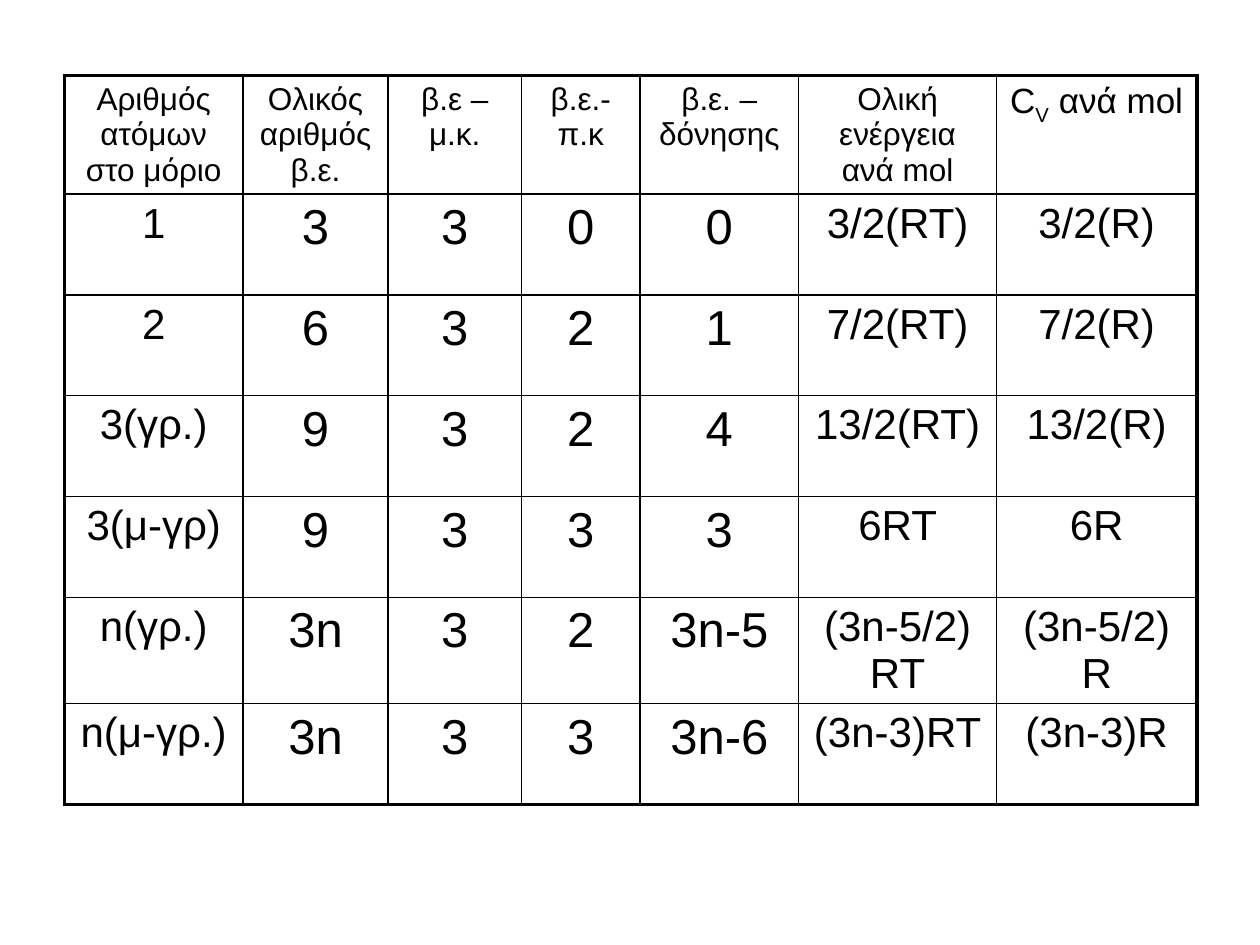
from lxml import etree
from pptx import Presentation, util as u
from pptx.dml.color import RGBColor
from pptx.enum import text
from pptx.oxml import ns

BLACK = RGBColor(0x00, 0x00, 0x00)
FONT = "Arial"
OUTER, INNER = 2.25, 1

COLUMN_WIDTHS = [1.42, 1.15, 1.06, 0.94, 1.26, 1.57, 1.59]
ROW_HEIGHT = 0.8
HEADINGS = [
    "Αριθμός ατόμων στο μόριο", "Ολικός αριθμός β.ε.", "β.ε – μ.κ.",
    "β.ε.- π.κ", "β.ε. – δόνησης", "Ολική ενέργεια ανά mol",
]
MOLECULES = [
    ["1", "3", "3", "0", "0", "3/2(RT)", "3/2(R)"],
    ["2", "6", "3", "2", "1", "7/2(RT)", "7/2(R)"],
    ["3(γρ.)", "9", "3", "2", "4", "13/2(RT)", "13/2(R)"],
    ["3(μ-γρ)", "9", "3", "3", "3", "6RT", "6R"],
    ["n(γρ.)", "3n", "3", "2", "3n-5", "(3n-5/2)RT", "(3n-5/2)R"],
    ["n(μ-γρ.)", "3n", "3", "3", "3n-6", "(3n-3)RT", "(3n-3)R"],
]
VALUE_SIZES = [24, 28, 28, 28, 28, 24, 24]


def add_run(cell, content, size, baseline=0):
    """Append a run to the cell; baseline is a percentage shift."""
    paragraph = cell.text_frame.paragraphs[0]
    paragraph.alignment = text.PP_ALIGN.CENTER
    run = paragraph.add_run()
    run.text = content
    run.font.name = FONT
    run.font.size = u.Pt(size)
    run.font.color.rgb = BLACK
    if baseline:
        run.font._element.set("baseline", str(baseline * 1000))


def set_borders(cell, widths):
    """Draw the left, right, top and bottom borders, widths in points."""
    properties = cell._tc.get_or_add_tcPr()
    for index, (side, width) in enumerate(zip("LRTB", widths)):
        line = etree.Element(ns.qn(f"a:ln{side}"), w=str(u.Pt(width)))
        fill = etree.SubElement(line, ns.qn("a:solidFill"))
        etree.SubElement(fill, ns.qn("a:srgbClr"), val=str(BLACK))
        properties.insert(index, line)


def add_grid(slide, row_count):
    """Add the empty table, with a heavy frame and thin inner lines."""
    column_count = len(COLUMN_WIDTHS)
    table = slide.shapes.add_table(
        row_count, column_count, u.Inches(0.51), u.Inches(0.6),
        u.Inches(sum(COLUMN_WIDTHS)), u.Inches(row_count * ROW_HEIGHT),
    ).table
    table.first_row = table.horz_banding = False
    for column, width in zip(table.columns, COLUMN_WIDTHS):
        column.width = u.Inches(width)
    for row_index, row in enumerate(table.rows):
        row.height = u.Inches(ROW_HEIGHT)
        for column_index, cell in enumerate(row.cells):
            cell.fill.background()
            on_frame = (column_index == 0, column_index == column_count - 1,
                        row_index == 0, row_index == row_count - 1)
            set_borders(cell, [OUTER if edge else INNER for edge in on_frame])
    return table


def fill_headings(table):
    for column, heading in enumerate(HEADINGS):
        add_run(table.cell(0, column), heading, 18)
    heat_capacity = table.cell(0, len(HEADINGS))
    add_run(heat_capacity, "C", 20)
    add_run(heat_capacity, "V", 20, baseline=-25)
    add_run(heat_capacity, " ανά mol", 20)


def fill_molecules(table):
    for row, values in enumerate(MOLECULES, start=1):
        for column, (value, size) in enumerate(zip(values, VALUE_SIZES)):
            add_run(table.cell(row, column), value, size)


def main():
    presentation = Presentation()
    presentation.slide_width = u.Inches(10)
    presentation.slide_height = u.Inches(7.5)
    slide = presentation.slides.add_slide(presentation.slide_layouts[6])
    table = add_grid(slide, 1 + len(MOLECULES))
    fill_headings(table)
    fill_molecules(table)
    presentation.save("out.pptx")


if __name__ == "__main__":
    main()
